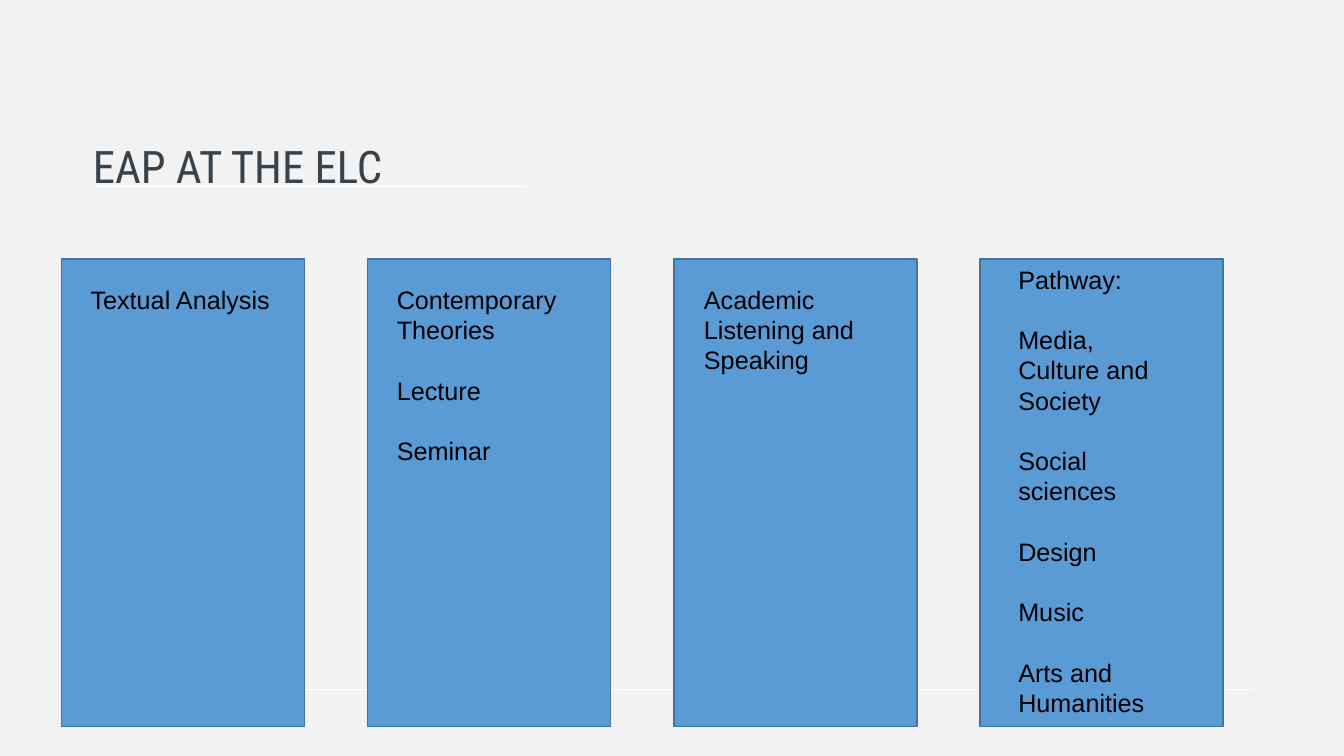
from lxml import etree
from pptx import Presentation
from pptx.dml.color import RGBColor
from pptx.enum.shapes import MSO_CONNECTOR, MSO_SHAPE
from pptx.enum.text import MSO_ANCHOR, PP_ALIGN
from pptx.oxml.ns import qn
from pptx.util import Inches, Pt

RECTANGLE = MSO_SHAPE.RECTANGLE
STRAIGHT = MSO_CONNECTOR.STRAIGHT
LEFT, TOP, BOTTOM = PP_ALIGN.LEFT, MSO_ANCHOR.TOP, MSO_ANCHOR.BOTTOM

BACKGROUND = RGBColor(0xF2, 0xF2, 0xF2)
WHITE = RGBColor(0xFF, 0xFF, 0xFF)
BLACK = RGBColor(0, 0, 0)
SLATE = RGBColor(0x37, 0x42, 0x4A)
PANEL_BLUE = RGBColor(0x5B, 0x9B, 0xD5)
PANEL_EDGE = RGBColor(0x43, 0x73, 0x9E)

# Grid of four equal panels (inches)
MARGIN = 0.92
PANEL_LEFT, PANEL_TOP = 0.61, 2.57
PANEL_WIDTH, PANEL_HEIGHT = 2.41, 4.64
PANEL_STEP = 3.037
LINE_PITCH = Pt(21.6)

# Course topics, with label inset, drop, width and height in the panel
COURSES = [
    (["Textual Analysis"], 0.19, 0.2, 2.03, 0.4),
    (["Contemporary Theories", "Lecture", "Seminar"], 0.19, 0.2, 1.8, 1.92),
    (["Academic Listening and Speaking"], 0.2, 0.2, 2, 1.01),
    (["Pathway:", "Media, Culture and Society", "Social sciences",
      "Design", "Music", "Arts and Humanities"], 0.28, 0, 1.75, 4.64),
]


def add_rule(slide, y, right):
    rule = slide.shapes.add_connector(
        STRAIGHT, Inches(MARGIN), Inches(y), Inches(right), Inches(y))
    rule.line.color.rgb = WHITE
    rule.line.width = Pt(0.5)
    etree.SubElement(rule._element.spPr, qn("a:effectLst"))


def add_text(paragraph, text, font_name, size, color):
    run = paragraph.add_run()
    run.text = text
    run.font.name = font_name
    run.font.size = Pt(size)
    run.font.color.rgb = color


def format_title(slide, text):
    title = slide.shapes.title
    title.left, title.top = Inches(MARGIN), Inches(0.5)
    title.width, title.height = Inches(6.42), Inches(1.47)
    frame = title.text_frame
    frame.word_wrap = True
    frame.vertical_anchor = BOTTOM
    frame.margin_left = frame.margin_right = 0
    frame.margin_top = frame.margin_bottom = Inches(0.05)
    heading = frame.paragraphs[0]
    heading.alignment = LEFT
    heading.line_spacing = 0.9
    add_text(heading, text, "Roboto Condensed", 32, SLATE)


def add_panel(slide, left):
    panel = slide.shapes.add_shape(
        RECTANGLE, Inches(left), Inches(PANEL_TOP),
        Inches(PANEL_WIDTH), Inches(PANEL_HEIGHT))
    panel.shadow.inherit = False
    panel.fill.solid()
    panel.fill.fore_color.rgb = PANEL_BLUE
    panel.line.color.rgb = PANEL_EDGE
    panel.line.width = Pt(1)


def add_topics(slide, topics, left, top, width, height):
    label = slide.shapes.add_textbox(
        Inches(left), Inches(top), Inches(width), Inches(height))
    frame = label.text_frame
    frame.word_wrap = True
    frame.vertical_anchor = TOP
    for index, topic in enumerate(topics):
        paragraph = frame.paragraphs[0] if index == 0 else frame.add_paragraph()
        paragraph.alignment = LEFT
        paragraph.line_spacing = LINE_PITCH
        if index:
            paragraph.space_before = LINE_PITCH
        add_text(paragraph, topic, "Arial", 18, BLACK)


def main():
    deck = Presentation()
    deck.slide_width, deck.slide_height = Inches(13.33), Inches(7.5)
    slide = deck.slides.add_slide(deck.slide_layouts[5])
    slide.background.fill.solid()
    slide.background.fill.fore_color.rgb = BACKGROUND

    # Title and the two thin rules
    format_title(slide, "EAP AT THE ELC")
    add_rule(slide, 6.84, 12.42)
    add_rule(slide, 1.85, 5.22)

    # Course panels with their topics
    for column, (topics, inset, drop, width, height) in enumerate(COURSES):
        left = PANEL_LEFT + column * PANEL_STEP
        add_panel(slide, left)
        add_topics(slide, topics, left + inset, PANEL_TOP + drop, width, height)

    deck.save("out.pptx")


if __name__ == "__main__":
    main()
